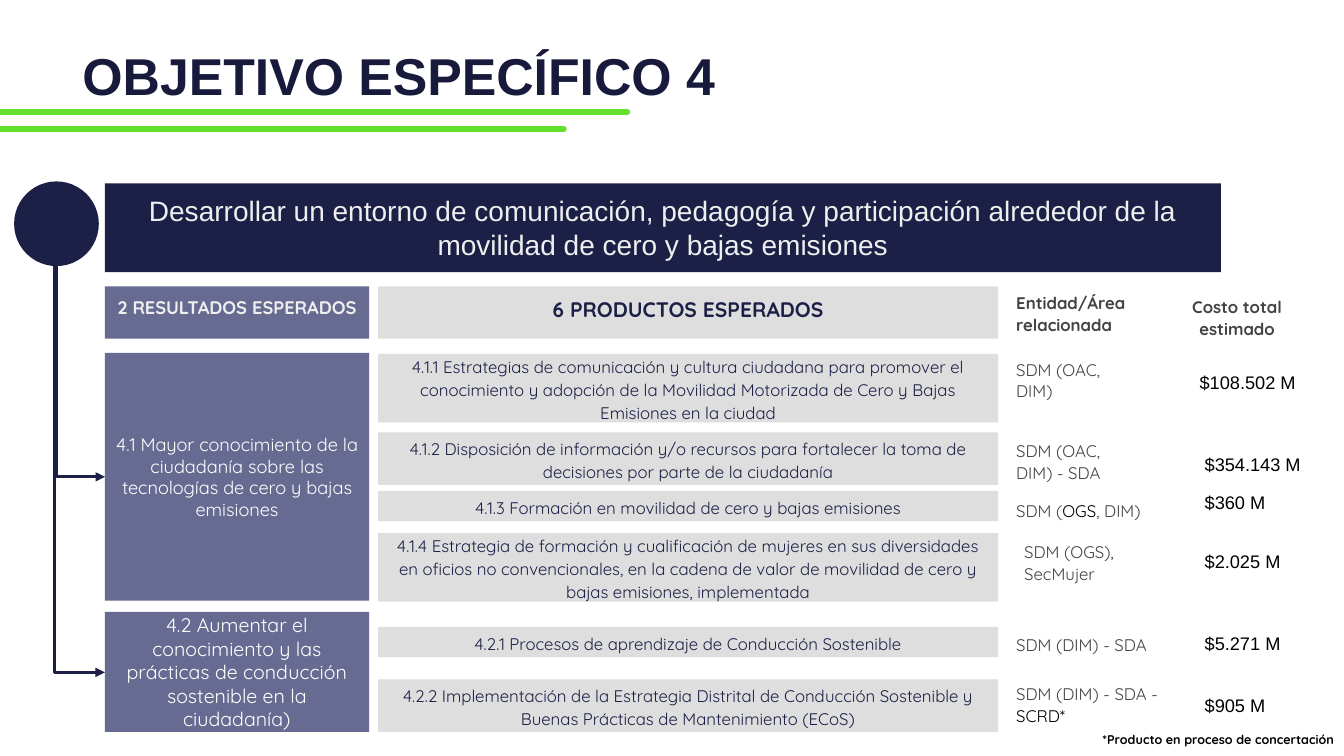
from lxml.etree import SubElement
from pptx import Presentation
from pptx.dml.color import RGBColor
from pptx.enum.shapes import MSO_CONNECTOR, MSO_SHAPE
from pptx.enum.text import MSO_ANCHOR, MSO_AUTO_SIZE, PP_ALIGN
from pptx.oxml.ns import qn
from pptx.util import Inches, Pt

COLORS = {"navy": "1C2046", "title": "181A3C", "slate": "676B92", "gray": "CCCCCC",
          "green": "64DF2B", "pale": "EFEFEF", "white": "FFFFFF", "text": "434343",
          "black": "000000"}
BODY, HEADING = "Quicksand", "Arial"

TITLE = "OBJETIVO ESPECÍFICO 4"
OBJECTIVE = ("Desarrollar un entorno de comunicación, pedagogía y participación "
             "alrededor de la movilidad de cero y bajas emisiones")
NOTE = "*Producto en proceso de concertación"

# Expected results: text, top, height, size
RESULTS = [
    ("4.1 Mayor conocimiento de la ciudadanía sobre las tecnologías de cero y bajas "
     "emisiones", 3.5, 2.46, 13),
    ("4.2 Aumentar el conocimiento y las prácticas de conducción sostenible en la "
     "ciudadanía)", 6.07, 1.19, 14),
]

# Expected products: text, top, number of lines
PRODUCTS = [
    ("4.1.1 Estrategias de comunicación y cultura ciudadana para promover el conocimiento y "
     "adopción de la Movilidad Motorizada de Cero y Bajas Emisiones en la ciudad", 3.51, 3),
    ("4.1.2 Disposición de información y/o recursos para fortalecer la toma de decisiones "
     "por parte de la ciudadanía", 4.29, 2),
    ("4.1.3 Formación en movilidad de cero y bajas emisiones", 4.87, 1),
    ("4.1.4 Estrategia de formación y cualificación de mujeres en sus diversidades en oficios "
     "no convencionales, en la cadena de valor de movilidad de cero y bajas emisiones, "
     "implementada", 5.29, 3),
    ("4.2.1 Procesos de aprendizaje de Conducción Sostenible", 6.22, 1),
    ("4.2.2 Implementación de la Estrategia Distrital de Conducción Sostenible y Buenas "
     "Prácticas de Mantenimiento (ECoS)", 6.74, 2),
]
PRODUCT_HEIGHTS = {1: 0.3, 2: 0.52, 3: 0.68}

# Related entities: runs of (text, color), left, top, width, height
ENTITIES = [
    ([("SDM (OAC, DIM)", "text")], 9.98, 3.5, 1.18, 0.52),
    ([("SDM (OAC, DIM) - SDA", "text")], 9.98, 4.31, 1.43, 0.52),
    ([("SDM (", "text"), ("OGS", "black"), (", DIM)", "text")], 9.98, 4.9, 2.07, 0.3),
    ([("SDM (OGS), SecMujer", "text")], 10.06, 5.31, 1.52, 0.52),
    ([("SDM (DIM) - SDA", "text")], 9.98, 6.23, 2.27, 0.3),
    ([("SDM (DIM) - SDA - ", "text"), ("SCRD*", "black")], 9.98, 6.72, 1.82, 0.52),
]

# Costs: text, left, top
COSTS = [("$108.502 M", 11.8, 3.58), ("$354.143 M", 11.85, 4.4), ("$360 M", 11.85, 4.77),
         ("$2.025 M", 11.85, 5.36), ("$5.271 M", 11.85, 6.17), ("$905 M", 11.85, 6.79)]

# Green rules: left, right, height on the page
RULES = [(-0.15, 6.22, 1.11), (-0.25, 5.59, 1.28)]
# Bent arrows: start x, start y, end y
ARROWS = [(0.56, 2.64, 4.73), (0.54, 2.55, 6.67)]
RESULT_LEFT, RESULT_WIDTH = 1.04, 2.62
PRODUCT_LEFT, PRODUCT_WIDTH = 3.75, 6.15
HEADER_TOP, HEADER_HEIGHT = 2.84, 0.52

deck = Presentation()
deck.slide_width, deck.slide_height = Inches(13.33), Inches(7.5)
page = deck.slides.add_slide(deck.slide_layouts[6])


def color(name):
    return RGBColor.from_string(COLORS[name])


def write(box, runs, size, font=BODY, bold=False, align=PP_ALIGN.LEFT, spacing=1.0,
          middle=False, inset=0.1, grow=False):
    frame = box.text_frame
    frame.word_wrap = True
    frame.auto_size = MSO_AUTO_SIZE.SHAPE_TO_FIT_TEXT if grow else MSO_AUTO_SIZE.NONE
    frame.vertical_anchor = MSO_ANCHOR.MIDDLE if middle else MSO_ANCHOR.TOP
    frame.margin_left = frame.margin_right = Inches(0.1)
    frame.margin_top = frame.margin_bottom = Inches(inset)
    para = frame.paragraphs[0]
    para.alignment, para.line_spacing = align, spacing
    para.font.size, para.font.name, para.font.bold = Pt(size), font, bold
    for text, ink in runs:
        span = para.add_run()
        span.text = text
        span.font.color.rgb = color(ink)


def add_block(place, fill, kind=MSO_SHAPE.RECTANGLE, opacity=None):
    block = page.shapes.add_shape(kind, *map(Inches, place))
    block.shadow.inherit = False
    block.fill.solid()
    block.fill.fore_color.rgb = color(fill)
    block.line.fill.background()
    if opacity:
        tint = block._element.spPr.find(qn("a:solidFill"))[0]
        SubElement(tint, qn("a:alpha")).set("val", str(opacity * 1000))
    return block


def add_text(place, runs, size, **style):
    write(page.shapes.add_textbox(*map(Inches, place)), runs, size, **style)


def add_line(kind, ends, ink, width):
    line = page.shapes.add_connector(kind, *map(Inches, ends))
    line.line.color.rgb = color(ink)
    line.line.width = Pt(width)
    SubElement(line._element.spPr, qn("a:effectLst"))
    return line


# Title and green rules
add_text((0.72, 0.37, 10.86, 0.89), [(TITLE, "title")], 37, font=HEADING, bold=True,
         spacing=0.7, middle=True, inset=0.05)
for left, right, y in RULES:
    rule = add_line(MSO_CONNECTOR.STRAIGHT, (left, y, right, y), "green", 4.5)
    rule.line._ln.set("cap", "rnd")

# Objective banner and circle
banner = add_block((RESULT_LEFT, 1.82, 11.07, 0.88), "navy")
write(banner, [(OBJECTIVE, "pale")], 20, font=HEADING, align=PP_ALIGN.CENTER, grow=True)
add_block((0.14, 1.8, 0.84, 0.84), "navy", MSO_SHAPE.OVAL)

# Column headers
header = add_block((RESULT_LEFT, HEADER_TOP, RESULT_WIDTH, HEADER_HEIGHT), "slate")
write(header, [("2 RESULTADOS ESPERADOS", "pale")], 13, bold=True, align=PP_ALIGN.CENTER)
header = add_block((PRODUCT_LEFT, HEADER_TOP, PRODUCT_WIDTH, HEADER_HEIGHT), "gray", opacity=64)
write(header, [("6 PRODUCTOS ESPERADOS", "navy")], 15, bold=True, align=PP_ALIGN.CENTER)
add_text((9.98, HEADER_TOP, 1.82, HEADER_HEIGHT), [("Entidad/Área relacionada", "text")], 12,
         bold=True, spacing=1.08, inset=0.05, grow=True)
add_text((11.59, 2.88, 1.36, HEADER_HEIGHT), [("Costo total estimado", "text")], 12,
         bold=True, align=PP_ALIGN.CENTER, spacing=1.08, inset=0.05, grow=True)

# Results and products
for text, top, height, size in RESULTS:
    block = add_block((RESULT_LEFT, top, RESULT_WIDTH, height), "slate")
    write(block, [(text, "white")], size, align=PP_ALIGN.CENTER, middle=True)
for text, top, lines in PRODUCTS:
    block = add_block((PRODUCT_LEFT, top, PRODUCT_WIDTH, PRODUCT_HEIGHTS[lines]), "gray",
                      opacity=64)
    write(block, [(text, "navy")], 12, align=PP_ALIGN.CENTER, spacing=1.15, middle=True)

# Bent arrows: a one-corner elbow, turned a quarter about its centre
for x, start, end in ARROWS:
    drop, run = end - start, RESULT_LEFT - x
    left, top = x + (run - drop) / 2, start + (drop - run) / 2
    arrow = add_line(MSO_CONNECTOR.ELBOW, (left + drop, top, left, top + run), "navy", 2.25)
    properties = arrow._element.spPr
    properties.find(qn("a:prstGeom")).set("prst", "bentConnector2")
    properties.find(qn("a:xfrm")).set("rot", str(270 * 60000))
    SubElement(arrow.line._ln, qn("a:tailEnd")).set("type", "triangle")

# Entities, costs and footnote
for runs, *place in ENTITIES:
    add_text(place, runs, 12, spacing=1.08, inset=0.05, grow=True)
for text, left, top in COSTS:
    add_text((left, top, 1.16, 0.42), [(text, "black")], 13, font=HEADING, grow=True)
add_text((10.72, 7.16, 2.72, 0.35), [(NOTE, "black")], 9, bold=True, align=PP_ALIGN.CENTER,
         middle=True, grow=True)

deck.save("out.pptx")
